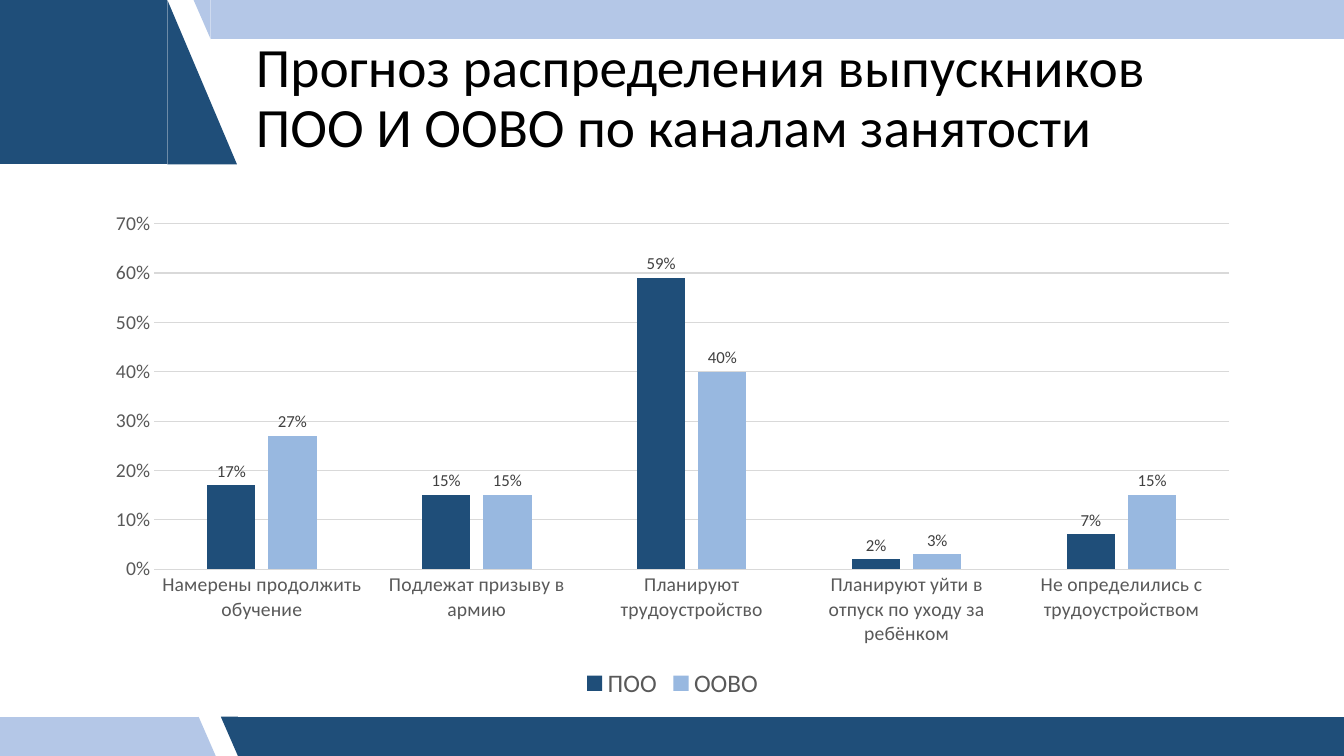
"""Build a slide on the expected employment channels of graduates."""
from lxml.etree import SubElement
from pptx import Presentation
from pptx.chart.data import CategoryChartData
from pptx.dml.color import RGBColor
from pptx.enum.chart import XL_CHART_TYPE, XL_LABEL_POSITION, XL_LEGEND_POSITION, XL_TICK_MARK
from pptx.enum.shapes import MSO_SHAPE
from pptx.enum.text import MSO_ANCHOR
from pptx.oxml.ns import qn
from pptx.util import Inches, Pt

NAVY, PALE, SKY = "1F4E79", "B4C7E7", "98B8E0"
GRAY, DARK, RULE = "595959", "404040", "D9D9D9"

CHANNELS = [
    "Намерены продолжить обучение",
    "Подлежат призыву в армию",
    "Планируют трудоустройство",
    "Планируют уйти в отпуск по уходу за ребёнком",
    "Не определились с трудоустройством",
]
GRADUATES = {
    "ПОО": (NAVY, [0.17, 0.15, 0.59, 0.02, 0.07]),
    "ООВО": (SKY, [0.27, 0.15, 0.4, 0.03, 0.15]),
}


def rgb(code):
    return RGBColor.from_string(code)


def style_font(font, size, color, name="Calibri"):
    font.name = name
    font.size = Pt(size)
    font.bold = False
    font.color.rgb = rgb(color)


def write(frame, text, size=18, color="000000", spacing=1.0, anchor=MSO_ANCHOR.TOP):
    frame.word_wrap = True
    frame.vertical_anchor = anchor
    paragraph = frame.paragraphs[0]
    paragraph.line_spacing = spacing
    run = paragraph.add_run()
    run.text = text
    style_font(run.font, size, color)


class ForecastSlide:
    def __init__(self, deck):
        self.slide = deck.slides.add_slide(deck.slide_layouts[6])

    def block(self, kind, box, color, rotation=0):
        block = self.slide.shapes.add_shape(kind, *map(Inches, box))
        block.rotation = rotation
        block.shadow.inherit = False
        block.fill.solid()
        block.fill.fore_color.rgb = rgb(color)
        block.line.fill.background()

    def band(self, left, top, width, height, slant, color, flipped=False):
        """Draw a bar with a slanted end, on its left if flipped."""
        rotation = 180 if flipped else 0
        tip = left - slant if flipped else left + width
        self.block(MSO_SHAPE.FLOWCHART_PROCESS, (left, top, width, height), color, rotation)
        self.block(MSO_SHAPE.RIGHT_TRIANGLE, (tip, top, slant, height), color, rotation)

    def title(self, text, box):
        heading = self.slide.shapes.add_textbox(*map(Inches, box))
        write(heading.text_frame, text, size=39.6, spacing=0.9, anchor=MSO_ANCHOR.MIDDLE)

    def column_chart(self, channels, graduates, box):
        shares = CategoryChartData(number_format="0%")
        shares.categories = channels
        for name, (_, values) in graduates.items():
            shares.add_series(name, values)
        chart = self.slide.shapes.add_chart(
            XL_CHART_TYPE.COLUMN_CLUSTERED, *map(Inches, box), shares).chart
        chart.has_title = False
        style_font(chart.font, 10, "000000")
        self.axes(chart)
        self.legend(chart)
        plot = chart.plots[0]
        plot.gap_width, plot.overlap = 219, -27
        plot.vary_by_categories = False
        for series, (color, _) in zip(plot.series, graduates.values()):
            self.columns(series, color)

    def axes(self, chart):
        for axis in (chart.category_axis, chart.value_axis):
            axis.major_tick_mark = axis.minor_tick_mark = XL_TICK_MARK.NONE
            style_font(axis.tick_labels.font, 14, GRAY)
        shares = chart.value_axis
        shares.minimum_scale, shares.maximum_scale, shares.major_unit = 0, 0.7, 0.1
        shares.tick_labels.number_format = "0%"
        shares.tick_labels.number_format_is_linked = False
        shares.format.line.fill.background()
        for line in (chart.category_axis.format.line, shares.major_gridlines.format.line):
            line.color.rgb = rgb(RULE)
            line.width = Pt(0.75)

    def legend(self, chart):
        chart.has_legend = True
        chart.legend.position = XL_LEGEND_POSITION.BOTTOM
        chart.legend.include_in_layout = False
        style_font(chart.legend.font, 18, GRAY)

    def columns(self, series, color):
        series.invert_if_negative = False
        series.format.fill.solid()
        series.format.fill.fore_color.rgb = rgb(color)
        labels = series.data_labels
        labels.show_value = True
        labels.number_format = "0%"
        labels.number_format_is_linked = False
        labels.position = XL_LABEL_POSITION.OUTSIDE_END
        style_font(labels.font, 12, DARK)


def main():
    deck = Presentation()
    deck.slide_width, deck.slide_height = Inches(13.33), Inches(7.5)
    forecast = ForecastSlide(deck)
    forecast.band(2.36, 7.11, 10.97, 0.39, 0.17, NAVY, flipped=True)
    forecast.band(0, 7.11, 1.97, 0.39, 0.17, PALE)
    forecast.band(2.09, 0, 11.24, 0.39, 0.17, PALE, flipped=True)
    forecast.band(0, 0, 1.66, 1.63, 0.69, NAVY)
    forecast.title("Прогноз распределения выпускников ПОО И ООВО по каналам занятости",
                   (2.44, 0.5, 10.01, 0.97))
    forecast.column_chart(CHANNELS, GRADUATES, (0.92, 2, 11.5, 4.98))
    deck.save("out.pptx")


if __name__ == "__main__":
    main()
